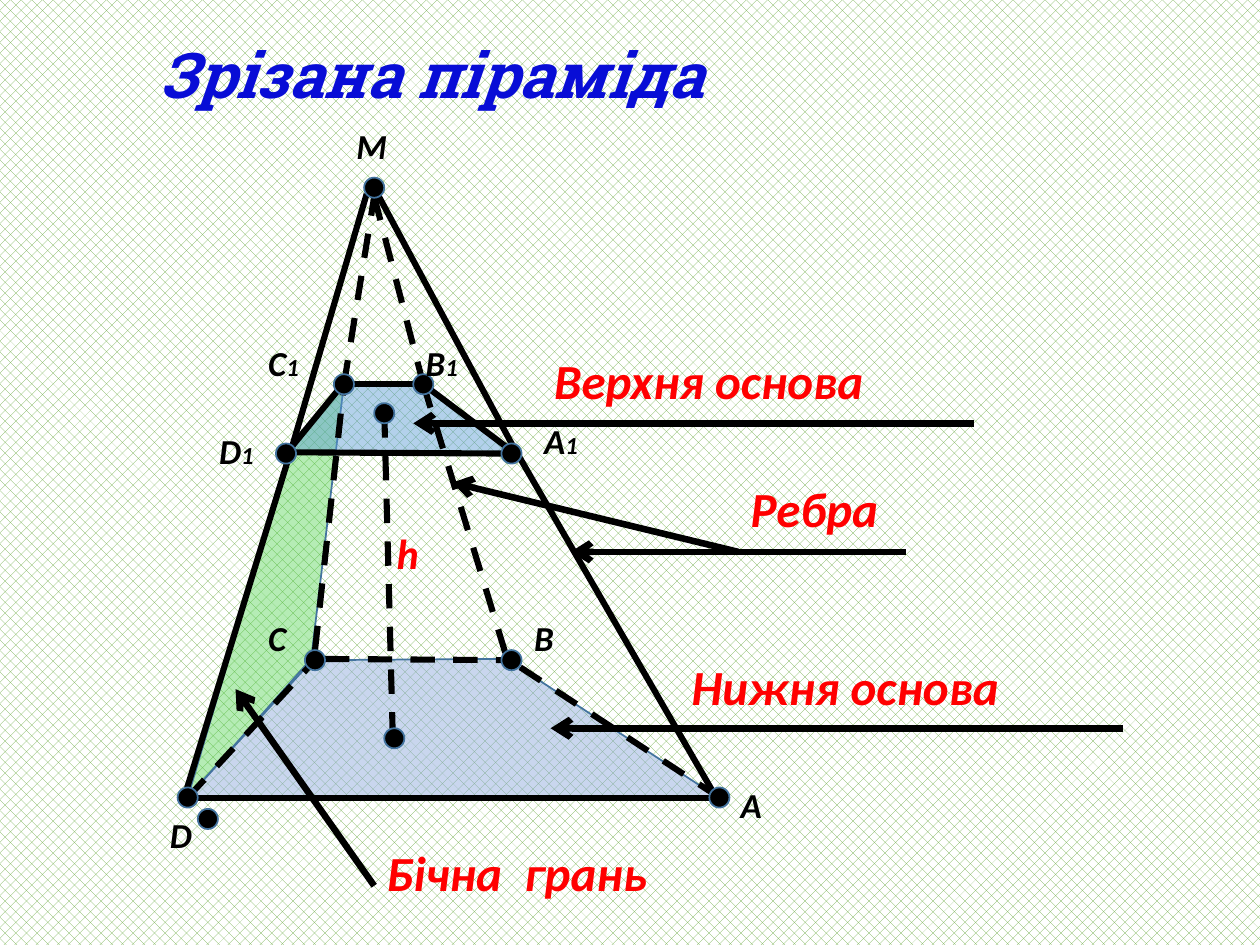
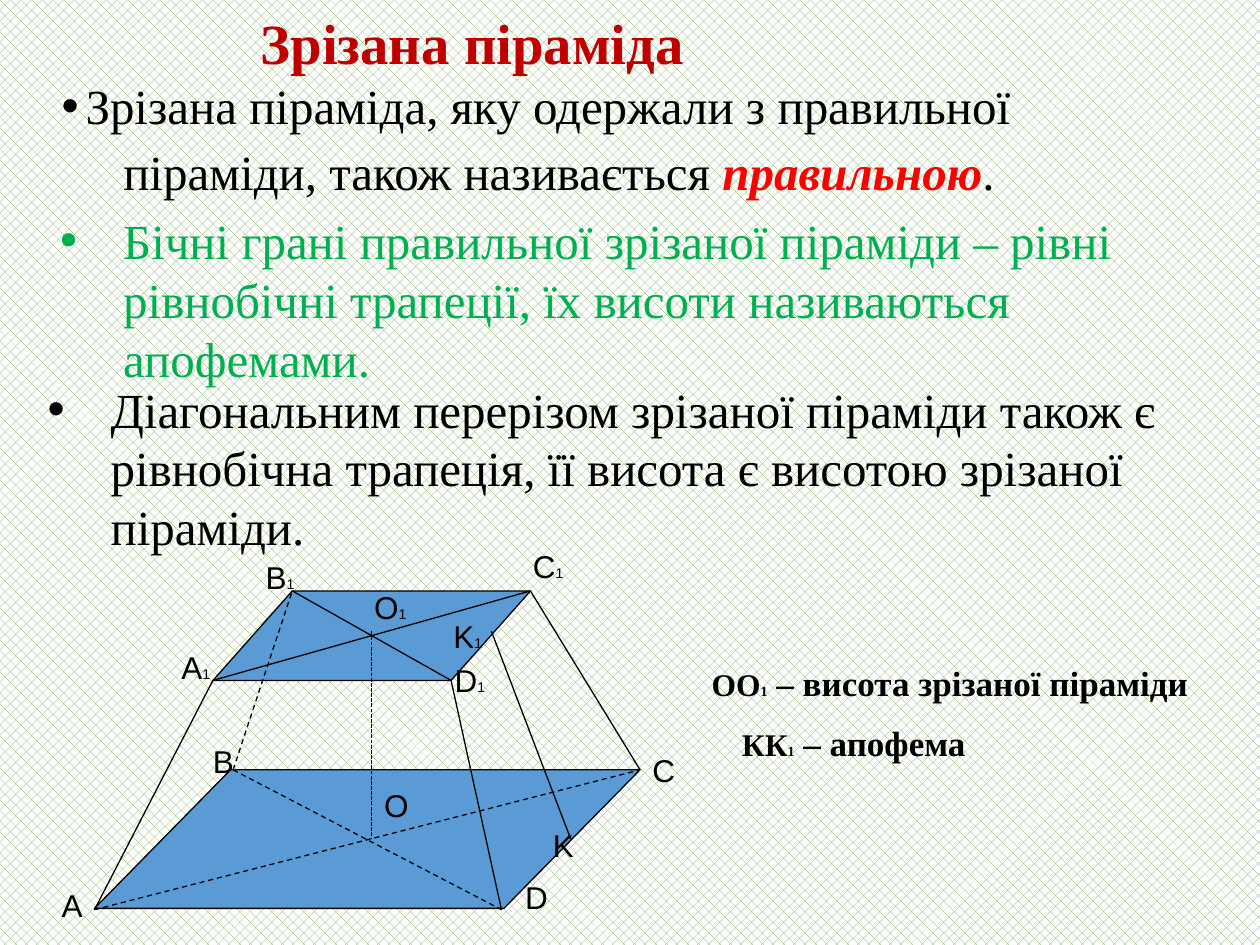
from lxml import etree
from pptx import Presentation
from pptx import util as u
from pptx.dml.color import RGBColor
from pptx.enum import dml, shapes, text
from pptx.oxml.ns import qn

COLORS = {
    "pattern": "70AD47", "white": "FFFFFF", "black": "000000", "outline": "43739E",
    "side": "33CC33", "lower": "8FAADC", "upper": "5B9BD5",
    "blue": "080DD6", "red": "FF0000", "dark red": "C00000", "green": "00B050",
}

STYLES = {
    "main title": ("Roboto Slab", 36, "blue", True, True),
    "vertex": ("Calibri", 20, "black", True, True),
    "vertex index": ("Calibri", 14, "black", True, True),
    "callout": ("Calibri", 28, "red", True, True),
    "height": ("Calibri", 24, "red", True, True),
    "title": ("Times New Roman", 32.4, "dark red", True, False),
    "body": ("Times New Roman", 28, "black", False, False),
    "green body": ("Times New Roman", 28, "green", False, False),
    "term": ("Times New Roman", 28, "red", True, True),
    "point": ("Arial", 18, "black", False, False),
    "point index": ("Arial", 8, "black", False, False),
    "segment": ("Times New Roman", 18, "black", True, False),
    "segment index": ("Times New Roman", 8, "black", True, False),
    "meaning": ("Times New Roman", 20, "black", True, False),
}

TITLE = "Зрізана піраміда"
DASHES = {"dash": dml.MSO_LINE.DASH, "fine": dml.MSO_LINE.SQUARE_DOT}

PYRAMID = {
    "M": (2.97, 1.49), "A": (5.71, 6.33), "B": (4.06, 5.24), "C": (2.5, 5.24),
    "D": (1.49, 6.33), "A1": (4.06, 3.6), "B1": (3.36, 3.05), "C1": (2.73, 3.05),
    "D1": (2.27, 3.6), "O": (3.13, 5.86), "O1": (3.05, 3.28), "extra": (1.65, 6.5),
}
DOT = 0.16
PYRAMID_FACES = [
    ("side", 36, [(1.49, 6.33), (2.47, 5.23), (2.73, 3.04), (2.3, 3.59)]),
    ("lower", 48, [(1.49, 6.33), (5.7, 6.33), (4.02, 5.23), (2.48, 5.24)]),
    ("upper", 46, [(2.3, 3.58), (4.1, 3.6), (3.35, 3.05), (2.73, 3.04)]),
]
D1_TOP, A1_TOP = (2.32, 3.54), (4.06, 3.52)
PYRAMID_EDGES = [
    (D1_TOP, (2.91, 1.54), None),
    ((2.58, 5.23), (4.14, 5.24), "dash"),
    ("D", (5.78, 6.33), None),
    ("B1", (4.01, 3.54), None),
    ((2.81, 3.05), "B1", None),
    ((1.48, 6.27), D1_TOP, None),
    ("D", "C", "dash"),
    ("O1", (3.12, 5.94), "dash"),
    ((2.34, 3.59), "A1", None),
    ("M", A1_TOP, None),
    (A1_TOP, (5.65, 6.27), None),
    ("A", (4.12, 5.29), "dash"),
    ("B1", (4.01, 5.18), "dash"),
    ((2.97, 1.56), "B1", "dash"),
    ((2.5, 5.16), "C1", "dash"),
    ("C1", (2.97, 1.56), "dash"),
    (D1_TOP, (2.68, 3.1), None),
]
PYRAMID_LABELS = {
    "M": (2.73, 0.94), "C": (2.03, 4.84), "B": (4.14, 4.84), "D": (1.25, 6.41),
    "A": (5.78, 6.17), "D1": (1.64, 3.36), "C1": (2.03, 2.66),
    "A1": (4.22, 3.28), "B1": (3.28, 2.66),
}
CALLOUTS = [
    ("Верхня основа", (4.3, 2.73, 3.83, 0.57)),
    ("Ребра", (5.86, 3.75, 1.8, 0.57)),
    ("Нижня основа", (5.39, 5.16, 3.83, 0.57)),
    ("Бічна  грань", (2.97, 6.64, 3.67, 0.57)),
]
POINTERS = [
    ((7.73, 3.36), (3.28, 3.36)),
    ((7.19, 4.38), (4.53, 4.38)),
    ((5.86, 4.38), (3.59, 3.83)),
    ((8.91, 5.78), (4.37, 5.78)),
    ((2.97, 7.03), (1.87, 5.47)),
]

FRUSTUM = {
    "A": (0.75, 7.22), "B": (1.85, 6.11), "C": (5.08, 6.11), "D": (3.98, 7.22),
    "A1": (1.69, 5.4), "B1": (2.32, 4.69), "C1": (4.21, 4.69), "D1": (3.58, 5.4),
    "K": (4.53, 6.66), "K1": (3.9, 5.01), "O": (2.95, 6.66), "O1": (2.95, 5.01),
}
FRUSTUM_BASES = [
    ((0.75, 6.11, 4.33, 1.1), 0.982),
    ((1.69, 4.69, 2.52, 0.71), 0.887),
]
FRUSTUM_EDGES = [
    ("A", "A1", None), ("B", "B1", "dash"), ("C", "C1", None), ("D", "D1", None),
    ("K", "K1", None), ("A", "C", "dash"), ("A1", "C1", None),
    ("B", "D", "dash"), ("B1", "D1", None), ("O1", "O", "fine"),
]
FRUSTUM_LABELS = {
    "A": (0.39, 6.98), "B": (1.59, 5.84), "C": (5.08, 5.91), "D": (4.07, 6.92),
    "A1": (1.34, 5.09), "B1": (2.01, 4.38), "D1": (3.51, 5.2), "C1": (4.13, 4.29),
    "K1": (3.5, 4.85), "K": (4.29, 6.51), "O": (2.95, 6.19), "O1": (2.87, 4.62),
}
REGULAR = [
    ([("Зрізана піраміда, яку одержали з правильної", "body")],
     {"margin": 0.19, "bullet": True}),
    ([("піраміди, також називається ", "body"), ("правильною", "term"), (".", "body")],
     {"margin": 0.49}),
]
PROPERTIES = [
    ("Бічні грані правильної зрізаної піраміди – рівні рівнобічні трапеції, "
     "їх висоти називаються апофемами.", "green body", (0.38, 1.62, 9.06, 1.51)),
    ("Діагональним перерізом зрізаної піраміди також є рівнобічна трапеція, "
     "її висота є висотою зрізаної піраміди.", "body", (0.28, 2.96, 9.06, 1.51)),
]
LEGEND = [
    ("OO", " – висота зрізаної піраміди", (5.55, 5.2, 4.17, 0.44)),
    ("КК", " – апофема", (5.79, 5.68, 3.39, 0.43)),
]


def rgb(name):
    return RGBColor.from_string(COLORS[name])


def inches(values):
    return [u.Inches(value) for value in values]


def new_slide(prs):
    slide = prs.slides.add_slide(prs.slide_layouts[6])
    fill = slide.background.fill
    fill.patterned()
    fill.pattern = dml.MSO_PATTERN.from_xml("pct40")
    fill.fore_color.rgb = rgb("pattern")
    fill.back_color.rgb = rgb("white")
    return slide


def paint(shape, fill, line, width, opacity=100):
    shape.shadow.inherit = False
    shape.fill.solid()
    shape.fill.fore_color.rgb = rgb(fill)
    shape.line.color.rgb = rgb(line)
    shape.line.width = u.Pt(width)
    if opacity < 100:
        color = shape._element.spPr.find(qn("a:solidFill"))[0]
        etree.SubElement(color, qn("a:alpha"), val=str(opacity * 1000))


def add_line(slide, start, end, width, dash=None, arrow=False):
    line = slide.shapes.add_connector(
        shapes.MSO_CONNECTOR.STRAIGHT, *inches(start + end))
    line.line.color.rgb = rgb("black")
    line.line.width = u.Pt(width)
    if dash:
        line.line.dash_style = DASHES[dash]
    if arrow:
        outline = line._element.spPr.find(qn("a:ln"))
        etree.SubElement(outline, qn("a:tailEnd"), type="arrow")
    etree.SubElement(line._element.spPr, qn("a:effectLst"))


def add_edges(slide, points, edges, width):
    for start, end, dash in edges:
        ends = [points[p] if isinstance(p, str) else p for p in (start, end)]
        add_line(slide, *ends, width, dash)


def format_paragraph(paragraph, spacing=None, before=None, half_before=False,
                     margin=0, bullet=False):
    if spacing:
        paragraph.line_spacing = spacing
    if before:
        paragraph.space_before = u.Pt(before)
    props = paragraph._p.get_or_add_pPr()
    if half_before:
        gap = etree.SubElement(props, qn("a:spcBef"))
        etree.SubElement(gap, qn("a:spcPct"), val="50000")
    props.set("marL", str(u.Inches(margin)))
    props.set("indent", str(-u.Inches(margin) if bullet else 0))
    if bullet:
        etree.SubElement(props, qn("a:buFont"), typeface="Arial")
        etree.SubElement(props, qn("a:buChar"), char="•")


def add_text(slide, box, paragraphs, anchor=text.MSO_ANCHOR.TOP, **shared):
    frame = slide.shapes.add_textbox(*inches(box)).text_frame
    frame.word_wrap = True
    frame.vertical_anchor = anchor
    for number, (runs, layout) in enumerate(paragraphs):
        paragraph = frame.add_paragraph() if number else frame.paragraphs[0]
        format_paragraph(paragraph, **shared, **layout)
        for words, style in runs:
            run = paragraph.add_run()
            run.text = words
            font = run.font
            font.name, size, color, font.bold, font.italic = STYLES[style]
            font.size = u.Pt(size)
            font.color.rgb = rgb(color)


def add_labels(slide, labels, style, widths, height, **layout):
    for name, corner in labels.items():
        runs = [(name[0], style)]
        if name[1:]:
            runs.append((name[1:], style + " index"))
        box = (*corner, widths[len(runs) - 1], height)
        add_text(slide, box, [(runs, layout)])


def build_pyramid(prs):
    slide = new_slide(prs)
    for color, opacity, corners in PYRAMID_FACES:
        first, *rest = [inches(corner) for corner in corners]
        outline = slide.shapes.build_freeform(*first)
        outline.add_line_segments(rest, close=True)
        paint(outline.convert_to_shape(), color, "outline", 1, opacity)
    add_edges(slide, PYRAMID, PYRAMID_EDGES, 3.5)
    for x, y in PYRAMID.values():
        dot = slide.shapes.add_shape(
            shapes.MSO_SHAPE.FLOWCHART_CONNECTOR,
            *inches((x - DOT / 2, y - DOT / 2, DOT, DOT)))
        paint(dot, "black", "outline", 1)
    add_labels(slide, PYRAMID_LABELS, "vertex", (0.39, 0.55), 0.44)
    add_text(slide, (1.17, 0.23, 6.33, 0.71), [([(TITLE, "main title")], {})])
    for start, end in POINTERS:
        add_line(slide, start, end, 3.75, arrow=True)
    for words, box in CALLOUTS:
        add_text(slide, box, [([(words, "callout")], {})])
    add_text(slide, (3.05, 4.14, 0.47, 0.5), [([("h", "height")], {})])


def build_properties(prs):
    slide = new_slide(prs)
    add_text(slide, (1.97, 0.13, 6.31, 0.47), [([(TITLE, "title")], {})],
             text.MSO_ANCHOR.MIDDLE, spacing=0.9)
    add_text(slide, (0.39, 0.6, 8.78, 1.21), REGULAR, spacing=0.9, before=7.5)
    for words, style, box in PROPERTIES:
        add_text(slide, box, [([(words, style)], {})],
                 half_before=True, margin=0.5, bullet=True)
    for box, slant in FRUSTUM_BASES:
        base = slide.shapes.add_shape(shapes.MSO_SHAPE.PARALLELOGRAM, *inches(box))
        base.adjustments[0] = slant
        paint(base, "upper", "black", 0.75)
    add_edges(slide, FRUSTUM, FRUSTUM_EDGES, 0.75)
    add_labels(slide, FRUSTUM_LABELS, "point", (0.39, 0.51), 0.4, half_before=True)
    for segment, meaning, box in LEGEND:
        runs = [(segment, "segment"), ("1", "segment index"), (meaning, "meaning")]
        add_text(slide, box, [(runs, {})], half_before=True)


def main():
    prs = Presentation()
    prs.slide_width, prs.slide_height = inches((10, 7.5))
    build_pyramid(prs)
    build_properties(prs)
    prs.save("out.pptx")


if __name__ == "__main__":
    main()
